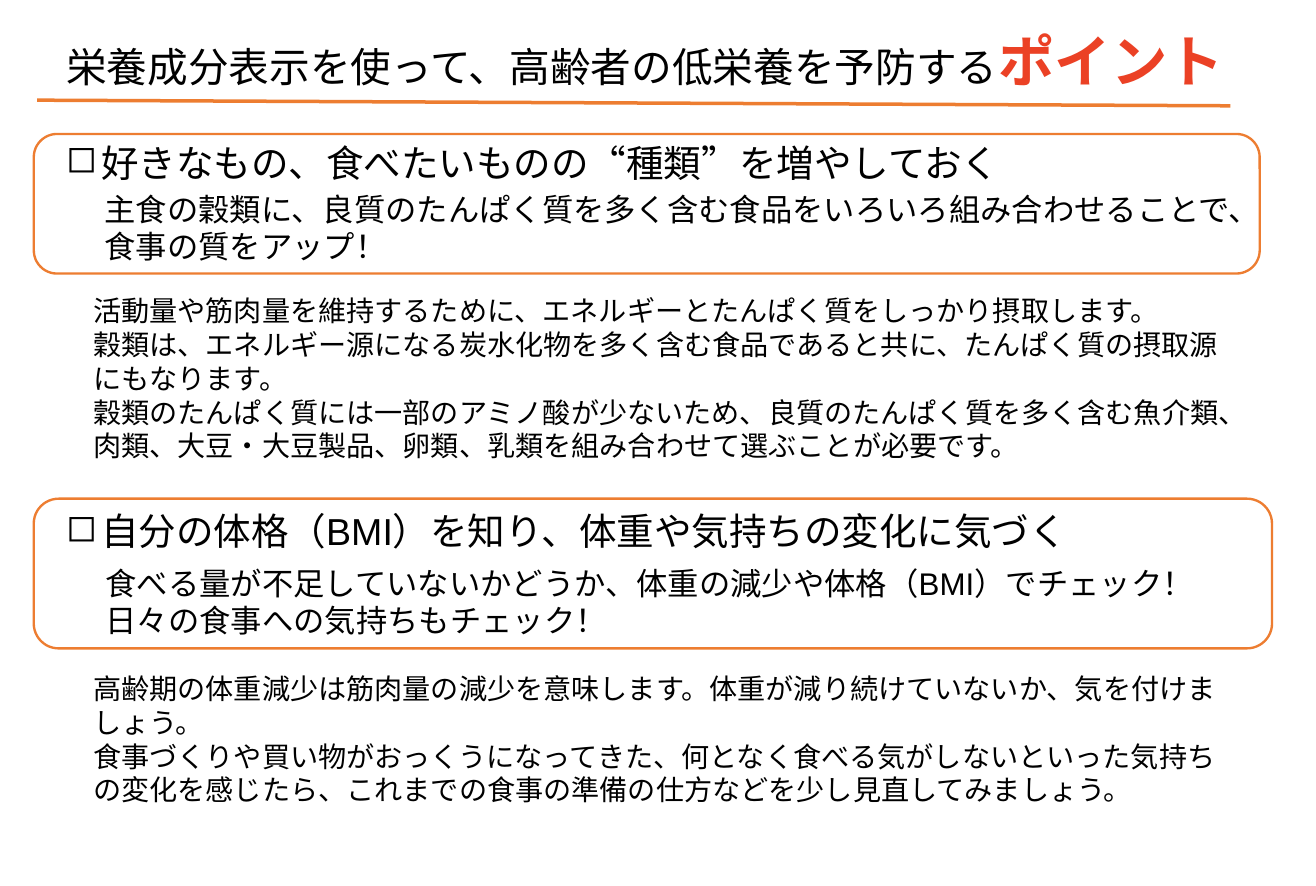
from lxml import etree
from pptx import Presentation
from pptx import util as u
from pptx.dml.color import RGBColor
from pptx.enum import shapes, text
from pptx.oxml import ns

BLACK = RGBColor(0x00, 0x00, 0x00)
RED = RGBColor(0xEB, 0x41, 0x25)
ORANGE = RGBColor(0xED, 0x7D, 0x31)


class AdvicePage:
    """Hold the style and the current slide, and draw each kind of element."""

    font = "Arial"
    title_size, heading_size, summary_size, detail_size = 26, 24, 20, 18

    def __init__(self, slide):
        self.slide = slide

    def add_run(self, paragraph, words, size, color=BLACK, bold=False):
        run = paragraph.add_run()
        run.text = words
        run.font.name = self.font
        run.font.size = u.Pt(size)
        run.font.bold = bold
        run.font.color.rgb = color

    def add_text(self, place, paragraphs, size, anchor=text.MSO_ANCHOR.TOP):
        frame = self.slide.shapes.add_textbox(*map(u.Inches, place)).text_frame
        frame.word_wrap = True
        frame.auto_size = text.MSO_AUTO_SIZE.SHAPE_TO_FIT_TEXT
        frame.vertical_anchor = anchor
        for index, words in enumerate(paragraphs):
            paragraph = frame.add_paragraph() if index else frame.paragraphs[0]
            self.add_run(paragraph, words, size)
        return frame

    def add_title(self, place, words, accent):
        frame = self.add_text(place, [words], self.title_size)
        self.add_run(frame.paragraphs[0], accent, 36, RED, True)

    def add_heading(self, place, words):
        frame = self.add_text(place, [words], self.heading_size)
        properties = frame.paragraphs[0]._p.get_or_add_pPr()
        indent = u.Inches(0.31)
        properties.set("marL", str(indent))
        properties.set("indent", str(-indent))
        etree.SubElement(properties, ns.qn("a:buChar")).set("char", "◻")

    def add_frame(self, place):
        border = self.slide.shapes.add_shape(
            shapes.MSO_SHAPE.ROUNDED_RECTANGLE, *map(u.Inches, place))
        border.shadow.inherit = False
        border.fill.background()
        border.line.color.rgb = ORANGE
        border.line.width = u.Pt(1.5)

    def add_rule(self, *ends):
        rule = self.slide.shapes.add_connector(
            shapes.MSO_CONNECTOR.STRAIGHT, *map(u.Inches, ends))
        rule.line.color.rgb = ORANGE
        rule.line.width = u.Pt(2.25)
        etree.SubElement(rule._element.spPr, ns.qn("a:effectLst"))


def main():
    deck = Presentation()
    deck.slide_width, deck.slide_height = u.Inches(11.69), u.Inches(7.87)
    page = AdvicePage(deck.slides.add_slide(deck.slide_layouts[6]))

    page.add_title((0.49, 0.18, 11.21, 0.71),
                   "栄養成分表示を使って、高齢者の低栄養を予防する", "ポイント")
    page.add_rule(0.33, 0.89, 10.93, 0.94)

    page.add_frame((0.3, 1.19, 10.89, 1.24))
    page.add_heading((0.49, 1.19, 9.47, 0.52),
                     "好きなもの、食べたいものの“種類”を増やしておく")
    page.add_text((0.83, 1.64, 10.34, 0.77), [
        "主食の穀類に、良質のたんぱく質を多く含む食品をいろいろ組み合わせることで、食事の質をアップ！",
    ], page.summary_size)
    page.add_text((0.73, 2.56, 10.24, 1.62), [
        "活動量や筋肉量を維持するために、エネルギーとたんぱく質をしっかり摂取します。",
        "穀類は、エネルギー源になる炭水化物を多く含む食品であると共に、たんぱく質の摂取源にもなります。",
        "穀類のたんぱく質には一部のアミノ酸が少ないため、良質のたんぱく質を多く含む魚介類、"
        "肉類、大豆・大豆製品、卵類、乳類を組み合わせて選ぶことが必要です。",
    ], page.detail_size)

    page.add_frame((0.3, 4.43, 11, 1.33))
    page.add_heading((0.49, 4.46, 10.7, 0.5),
                     "自分の体格（BMI）を知り、体重や気持ちの変化に気づく")
    page.add_text((0.84, 4.96, 10.14, 0.77), [
        "食べる量が不足していないかどうか、体重の減少や体格（BMI）でチェック！",
        "日々の食事への気持ちもチェック！",
    ], page.summary_size)
    page.add_text((0.73, 6.06, 10.39, 1.01), [
        "高齢期の体重減少は筋肉量の減少を意味します。体重が減り続けていないか、気を付けましょう。",
        "食事づくりや買い物がおっくうになってきた、何となく食べる気がしないといった気持ち"
        "の変化を感じたら、これまでの食事の準備の仕方などを少し見直してみましょう。",
    ], page.detail_size, text.MSO_ANCHOR.MIDDLE)

    deck.save("out.pptx")


if __name__ == "__main__":
    main()
